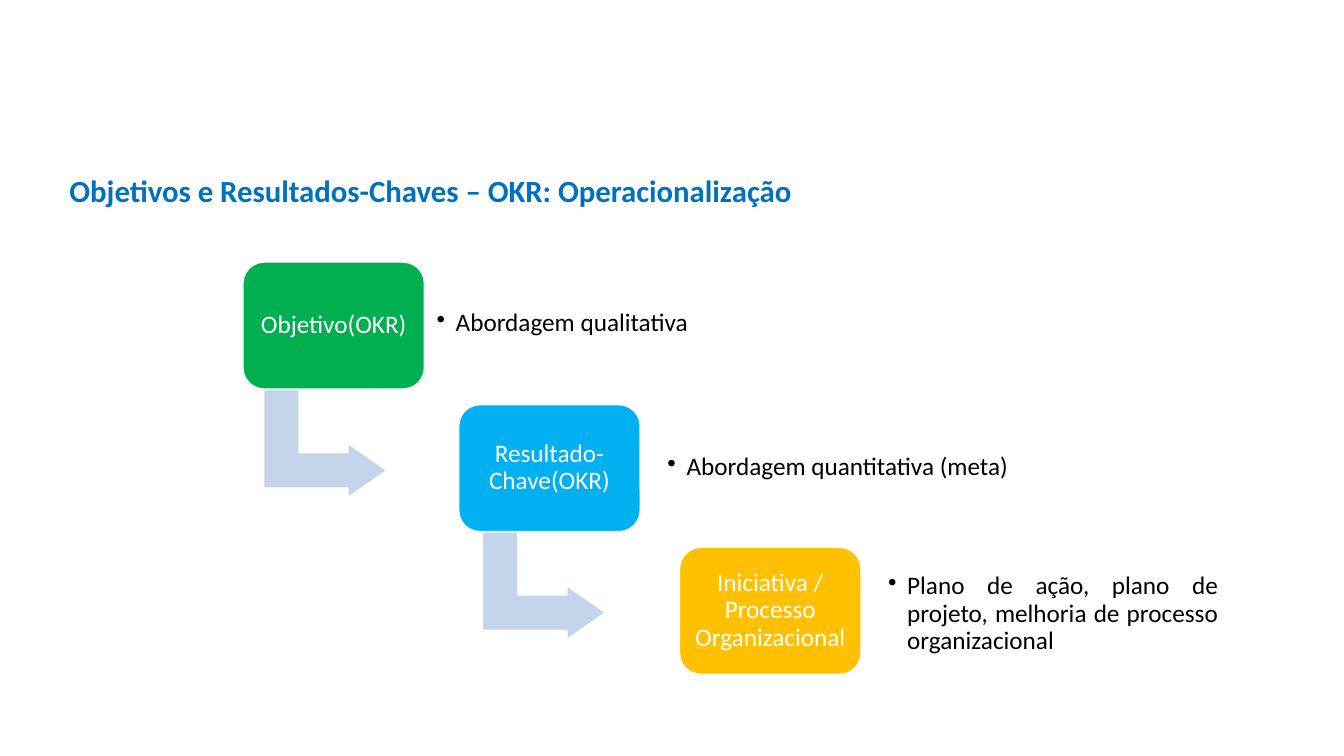
"""Build the OKR slide: a staircase of three steps, each with its bullet."""
import pptx
import pptx.util
import pptx.dml.color
import pptx.enum.shapes
import pptx.enum.text
import pptx.oxml.ns
from lxml import etree

Inches = pptx.util.Inches
Pt = pptx.util.Pt
RGBColor = pptx.dml.color.RGBColor
SHAPE = pptx.enum.shapes.MSO_SHAPE
ALIGN = pptx.enum.text.PP_ALIGN

TITLE_BLUE = RGBColor(0x00, 0x70, 0xC0)
GREEN = RGBColor(0x00, 0xB0, 0x50)
SKY_BLUE = RGBColor(0x00, 0xB0, 0xF0)
AMBER = RGBColor(0xFF, 0xC0, 0x00)
ARROW_BLUE = RGBColor(0xC4, 0xD5, 0xEB)
WHITE = RGBColor(0xFF, 0xFF, 0xFF)
BLACK = RGBColor(0x00, 0x00, 0x00)

STEP_TOP, STEP_PITCH = 2.6, 1.415
STEP_WIDTH, STEP_HEIGHT = 1.8, 1.26
BULLET_INDENT = Inches(0.19)


def add_filled_shape(slide, kind, left, top, width, height, fill, adjustments):
    shape = slide.shapes.add_shape(
        kind, Inches(left), Inches(top), Inches(width), Inches(height))
    shape.shadow.inherit = False
    shape.fill.solid()
    shape.fill.fore_color.rgb = fill
    shape.line.color.rgb = WHITE
    shape.line.width = Pt(1)
    for index, value in enumerate(adjustments):
        shape.adjustments[index] = value
    return shape


def write_text(box, text, size, color, align, inset=None):
    frame = box.text_frame
    frame.word_wrap = True
    if inset is not None:
        frame.vertical_anchor = pptx.enum.text.MSO_ANCHOR.MIDDLE
        frame.margin_left = frame.margin_right = Inches(inset)
        frame.margin_top = frame.margin_bottom = Inches(inset)
    para = frame.paragraphs[0]
    para.text = text
    para.alignment = align
    para.line_spacing = 0.9
    span = para.runs[0]
    span.font.name = "Calibri"
    span.font.size = Pt(size)
    span.font.color.rgb = color
    return para


deck = pptx.Presentation()
deck.slide_width = Inches(13.33)
deck.slide_height = Inches(7.5)
page = deck.slides.add_slide(deck.slide_layouts[6])

title = page.shapes.add_textbox(Inches(0.59), Inches(1.7), Inches(12.16), Inches(0.68))
title_para = write_text(title, "Objetivos e Resultados-Chaves – OKR: Operacionalização",
                        22, TITLE_BLUE, ALIGN.LEFT)
title_para.runs[0].font.bold = True

for arrow_left, arrow_top in [(2.69, 3.79), (4.86, 5.2)]:
    arrow = add_filled_shape(page, SHAPE.BENT_UP_ARROW, arrow_left, arrow_top,
                             1.07, 1.22, ARROW_BLUE, [0.328, 0.25, 0.358])
    arrow.rotation = 90

steps = [
    (2.41, GREEN, "Objetivo(OKR)",
     "Abordagem qualitativa", (4.26, 2.7, 4.11), ALIGN.LEFT, 0.07),
    (4.55, SKY_BLUE, "Resultado-Chave(OKR)",
     "Abordagem quantitativa (meta)", (6.55, 4.13, 4.77), ALIGN.LEFT, 0.07),
    (6.74, AMBER, "Iniciativa / Processo Organizacional",
     "Plano de ação, plano de projeto, melhoria de processo organizacional",
     (8.71, 5.58, 3.47), ALIGN.JUSTIFY, 0.1),
]
for number, (left, fill, label, detail, place, align, inset) in enumerate(steps):
    step = add_filled_shape(page, SHAPE.ROUNDED_RECTANGLE, left,
                            STEP_TOP + number * STEP_PITCH,
                            STEP_WIDTH, STEP_HEIGHT, fill, [0.167])
    write_text(step, label, 18, WHITE, ALIGN.CENTER, 0.07)

    detail_left, detail_top, detail_width = place
    box = page.shapes.add_textbox(Inches(detail_left), Inches(detail_top),
                                  Inches(detail_width), Inches(1.02))
    para = write_text(box, detail, 18, BLACK, align, inset)
    properties = para._p.get_or_add_pPr()
    properties.set("marL", str(BULLET_INDENT))
    properties.set("indent", str(-BULLET_INDENT))
    bullet = etree.SubElement(properties, pptx.oxml.ns.qn("a:buChar"))
    bullet.set("char", "•")

deck.save("out.pptx")
